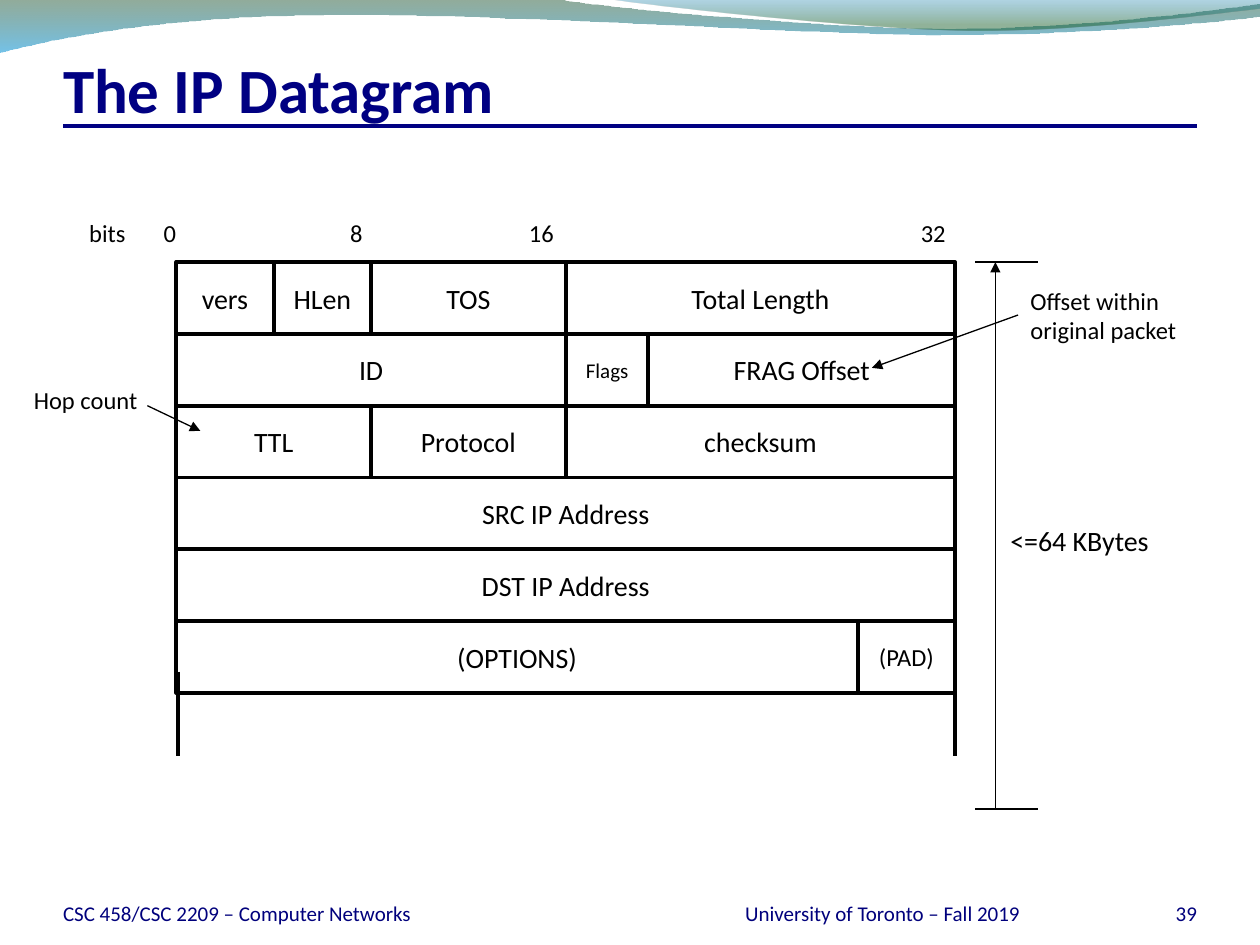
from lxml.etree import SubElement
from pptx import Presentation
from pptx.dml.color import RGBColor
from pptx.enum.shapes import MSO_CONNECTOR, MSO_SHAPE
from pptx.enum.text import MSO_ANCHOR as Anchor, MSO_AUTO_SIZE as AutoSize, PP_ALIGN as Align
from pptx.oxml.ns import qn
from pptx.util import Inches, Pt

BLACK = RGBColor(0x00, 0x00, 0x00)
NAVY = RGBColor(0x00, 0x00, 0x82)
FOOTER_NAVY = RGBColor(0x00, 0x00, 0x7C)
FOREST = RGBColor(0x0F, 0x46, 0x1E)
SKY = RGBColor(0x00, 0x90, 0xD6)
OCEAN = RGBColor(0x00, 0x76, 0xAF)
GREEN = RGBColor(0x0D, 0x58, 0x21)
FONT = "Calibri"
BITS = 32

# Rows of the header: (label, width in bits, text size)
HEADER_ROWS = [
    [("vers", 4, 16), ("HLen", 4, 16), ("TOS", 8, 16), ("Total Length", 16, 16)],
    [("ID", 16, 16), ("Flags", 3.4, 12), ("FRAG Offset", 12.6, 16)],
    [("TTL", 8, 16), ("Protocol", 8, 16), ("checksum", 16, 16)],
    [("SRC IP Address", 32, 16)],
    [("DST IP Address", 32, 16)],
    [("(OPTIONS)", 28, 16), ("(PAD)", 4, 14)],
]

# Wave outlines: a start, then straight steps (one point) or curves (three)
BACK_WAVE = [
    [(0, -0.01)], [(4.4, -0.01)],
    [(4.76, 0.06), (6.64, 0.23), (7.58, 0.23)],
    [(8.53, 0.23), (9.58, 0.09), (10, 0.03)],
    [(10.01, 0.13)],
    [(9.83, 0.16), (8.7, 0.28), (7.46, 0.28)],
    [(6.22, 0.27), (3.82, 0.1), (2.57, 0.12)],
    [(1.29, 0.13), (0.46, 0.3), (-0.01, 0.42)],
]
FRONT_WAVE = [
    [(4.79, -0.01)],
    [(5.09, 0.04), (6.82, 0.23), (7.69, 0.24)],
    [(8.56, 0.25), (9.61, 0.11), (10, 0.07)],
    [(10, -0.01)],
]


def write(shape, text, size, color=BLACK, align=Align.LEFT,
          anchor=Anchor.MIDDLE, wrap=True, bold=False):
    frame = shape.text_frame
    frame.word_wrap = wrap
    frame.vertical_anchor = anchor
    para = frame.paragraphs[0]
    para.text = text
    para.alignment = align
    para.font.name = FONT
    para.font.size = Pt(size)
    para.font.bold = bold
    para.font.color.rgb = color
    return frame


def set_margins(frame, top=0):
    frame.margin_left = frame.margin_right = frame.margin_bottom = 0
    frame.margin_top = Inches(top)


def add_label(page, text, left, top, width, height, size, **style):
    box = page.shapes.add_textbox(
        Inches(left), Inches(top), Inches(width), Inches(height))
    write(box, text, size, **style)
    return box


def add_line(page, start, end, width=0.75, color=BLACK, arrow=False):
    line = page.shapes.add_connector(
        MSO_CONNECTOR.STRAIGHT, *(Inches(v) for v in start + end))
    line.line.width = Pt(width)
    line.line.color.rgb = color
    properties = line._element.spPr
    if arrow:
        SubElement(properties.find(qn("a:ln")), qn("a:tailEnd"), type="triangle")
    SubElement(properties, qn("a:effectLst"))
    return line


def bend_edges(shape, outline):
    """Turn the straight edges that have control points into cubic curves."""
    edges = list(shape._element.spPr.iter(qn("a:lnTo")))
    for edge, segment in zip(edges, outline[1:]):
        if len(segment) == 1:
            continue
        edge.tag = qn("a:cubicBezTo")
        edge.remove(edge[0])
        for x, y in segment:
            SubElement(edge, qn("a:pt"), x=str(Inches(x) - shape.left),
                       y=str(Inches(y) - shape.top))


def add_wave(page, outline, stops):
    """Stops are (position, color, opacity in percent)."""
    corners = [(Inches(x), Inches(y)) for x, y in (part[-1] for part in outline)]
    builder = page.shapes.build_freeform(*corners[0])
    builder.add_line_segments(corners[1:], close=True)
    wave = builder.convert_to_shape()
    bend_edges(wave, outline)
    wave.shadow.inherit = False
    wave.line.fill.background()
    wave.fill.gradient()
    wave.fill.gradient_angle = 270
    for stop, (position, color, _) in zip(wave.fill.gradient_stops, stops):
        stop.position = position
        stop.color.rgb = color
    colors = list(wave._element.spPr.iter(qn("a:srgbClr")))
    for element, (_, _, opacity) in zip(colors, stops):
        SubElement(element, qn("a:alpha"), val=str(opacity * 1000))


def add_banner(page):
    add_wave(page, BACK_WAVE, [(0, FOREST, 45), (1, SKY, 55)])
    add_wave(page, FRONT_WAVE, [(0, OCEAN, 30), (0.8, GREEN, 45)])


def add_title(page, left, top, width, height):
    title = page.shapes.title
    title.left, title.top = Inches(left), Inches(top)
    title.width, title.height = Inches(width), Inches(height)
    frame = write(title, "The IP Datagram", 36, NAVY, anchor=Anchor.BOTTOM, bold=True)
    set_margins(frame, top=0.05)
    bottom = top + height
    add_line(page, (left, bottom), (left + width, bottom), 2.25, NAVY)


def add_footer(page, left, top, width, height):
    parts = [
        ("CSC 458/CSC 2209 – Computer Networks", 0, 4.75, Align.LEFT),
        ("University of Toronto – Fall 2019", 4.92, 3.17, Align.CENTER),
        ("39", width - 0.83, 0.83, Align.RIGHT),
    ]
    for text, offset, part_width, align in parts:
        box = add_label(page, text, left + offset, top, part_width, height, 12,
                        color=FOOTER_NAVY, align=align, anchor=Anchor.BOTTOM)
        set_margins(box.text_frame)


def add_bit_scale(page, left, top, height):
    marks = [("8", 1.28, 0.3), ("16", 2.7, 0.4), ("32", 5.81, 0.4),
             ("bits\t0", -0.79, 0.89)]
    for text, offset, width in marks:
        box = add_label(page, text, left + offset, top, width, height, 14,
                        anchor=Anchor.TOP, wrap=False)
        box.text_frame.auto_size = AutoSize.SHAPE_TO_FIT_TEXT
    # The zero stands at a tab stop above the left edge
    properties = box.text_frame.paragraphs[0]._p.get_or_add_pPr()
    stops = properties.makeelement(qn("a:tabLst"))
    properties.find(qn("a:defRPr")).addprevious(stops)
    SubElement(stops, qn("a:tab"), pos=str(Inches(0.59)), algn="l")


def add_header_fields(page, left, top, width, height):
    row_height = height / len(HEADER_ROWS)
    for row, fields in enumerate(HEADER_ROWS):
        start = 0
        for text, bits, size in fields:
            field = page.shapes.add_shape(
                MSO_SHAPE.RECTANGLE,
                Inches(left + width * start / BITS), Inches(top + row * row_height),
                Inches(width * bits / BITS), Inches(row_height))
            field.shadow.inherit = False
            field.fill.background()
            field.line.color.rgb = BLACK
            field.line.width = Pt(2.25)
            write(field, text, size, align=Align.CENTER)
            start += bits

    # Open sides of the data part
    for x in (left + width, left + 0.01):
        add_line(page, (x, top + height - 0.17), (x, top + height + 0.5), 2.25)


def add_size_bracket(page, left, top, width, height):
    bottom = top + height
    middle = left + 0.16
    add_line(page, (middle, bottom), (middle, top), arrow=True)
    for y in (top, bottom):
        add_line(page, (left, y), (left + width, y))
    add_label(page, "<=64 KBytes", middle + 0.02, top + 1.92, 1.51, 0.57, 16)


def add_notes_on_fields(page):
    offset_note = add_label(page, "Offset within original packet",
                            8.08, 2.08, 1.75, 0.84, 14)
    pointer = add_line(page, (8.08, 2.5), (6.92, 2.92), arrow=True)
    pointer.begin_connect(offset_note, 1)
    add_label(page, "Hop count", 0.17, 2.92, 1.43, 0.5, 14)
    add_line(page, (1.17, 3.22), (1.59, 3.42), arrow=True)


def main():
    deck = Presentation()
    deck.slide_width, deck.slide_height = Inches(10), Inches(7.5)
    page = deck.slides.add_slide(deck.slide_layouts[5])
    add_banner(page)
    add_title(page, 0.5, 0.33, 9, 0.67)
    add_footer(page, 0.5, 6.95, 9, 0.4)
    add_header_fields(page, 1.4, 2.08, 6.18, 3.42)
    add_size_bracket(page, 7.74, 2.08, 0.5, 4.34)
    add_notes_on_fields(page)
    add_bit_scale(page, 1.4, 1.68, 0.33)
    deck.save("out.pptx")


if __name__ == "__main__":
    main()
